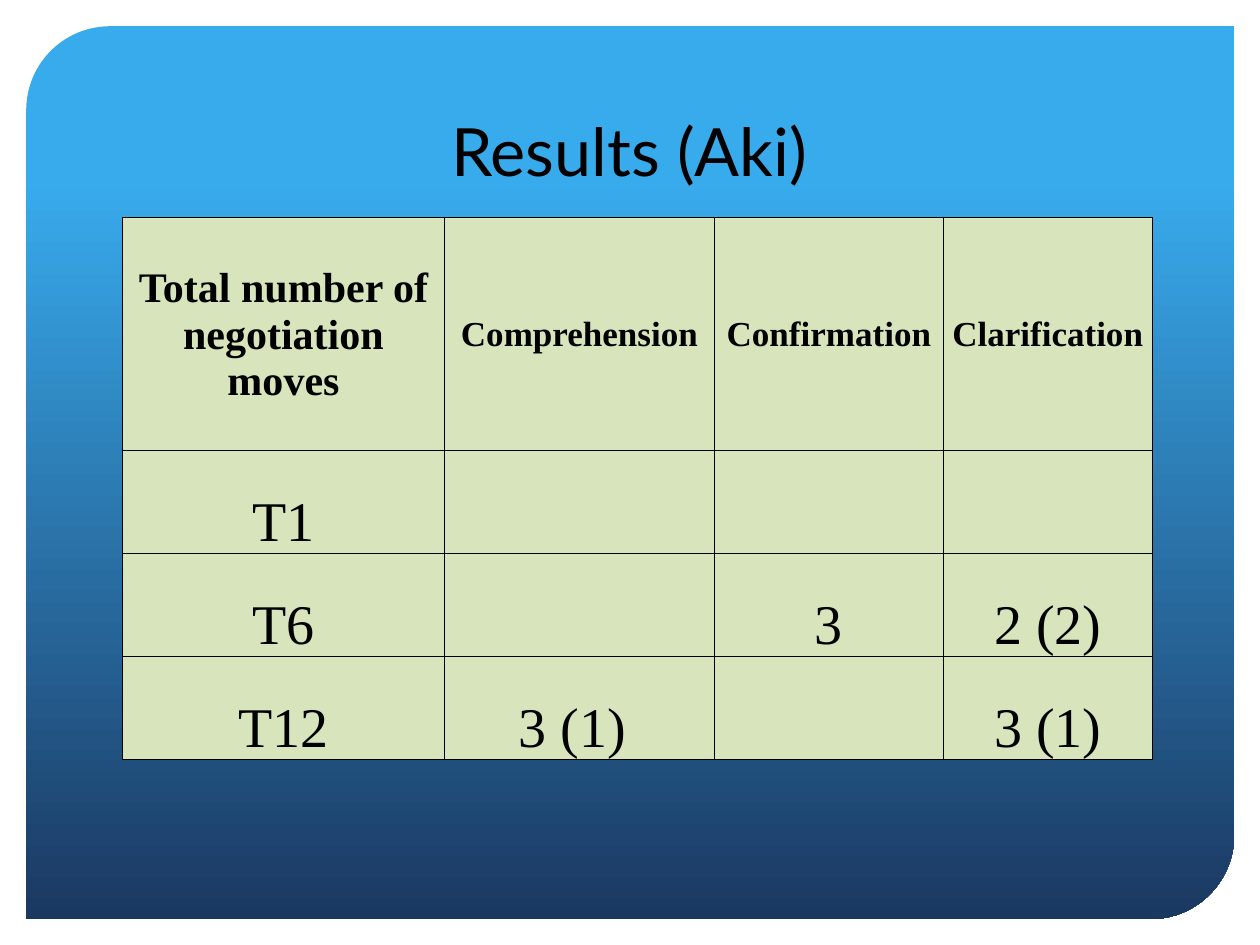
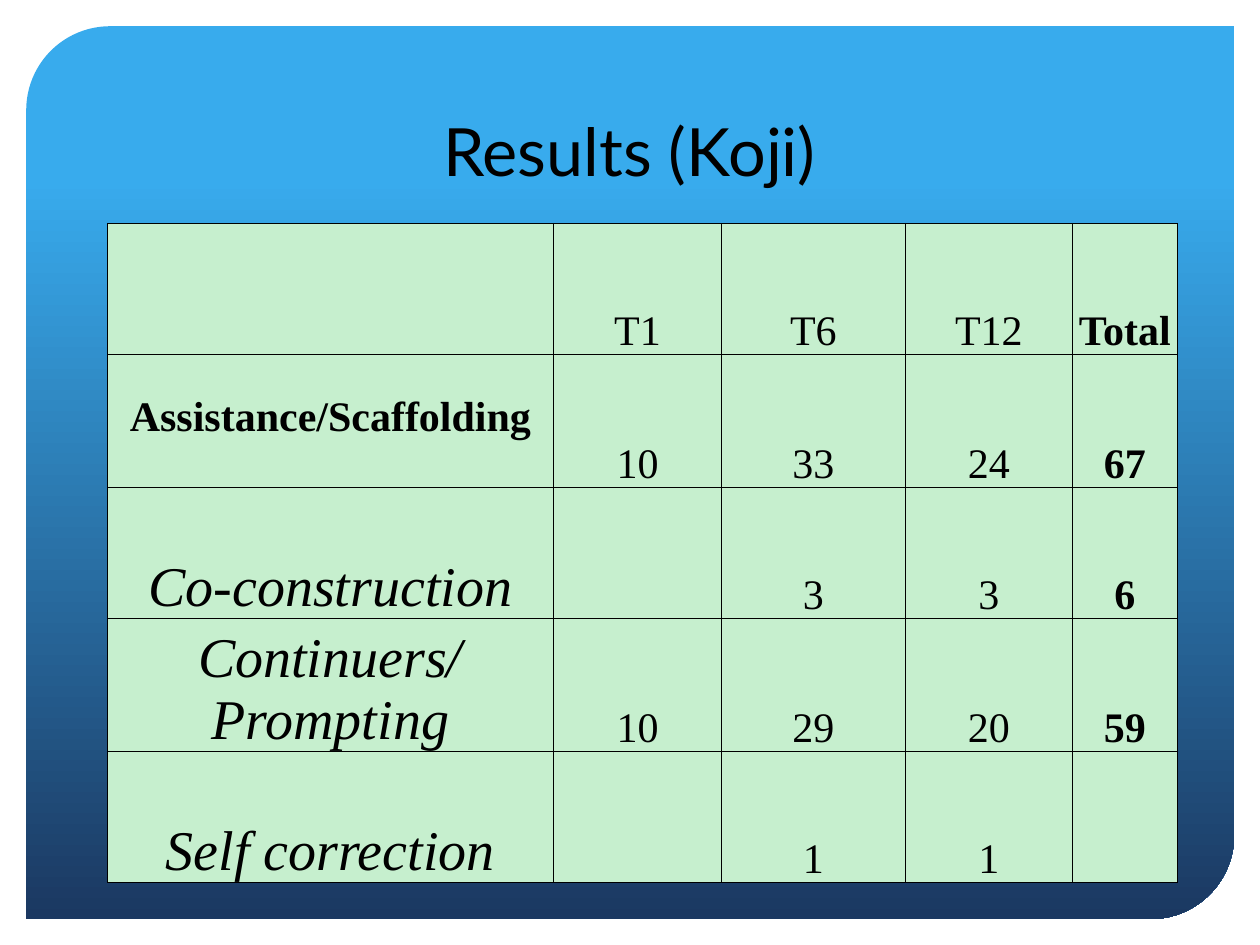
from dataclasses import dataclass

from lxml import etree
from pptx import Presentation
from pptx.dml.color import RGBColor
from pptx.enum import shapes, text
from pptx.oxml import ns
from pptx.util import Pt

BLACK = RGBColor(0x00, 0x00, 0x00)
SKY = RGBColor(0x38, 0xAB, 0xED)
NAVY = RGBColor(0x1B, 0x38, 0x61)
OLIVE = RGBColor(0xD8, 0xE4, 0xBC)
MINT = RGBColor(0xC6, 0xEF, 0xCE)

TITLE_FONT = "Lato"
TABLE_FONT = "Times New Roman"


@dataclass
class CellStyle:
    size: int = 24
    bold: bool = False
    italic: bool = False
    anchor: text.MSO_ANCHOR = text.MSO_ANCHOR.BOTTOM
    bottom: float = 0


NUMBER = CellStyle()
TOTAL = CellStyle(bold=True)
CATEGORY = CellStyle(bold=True, bottom=26.6)
SUBCATEGORY = CellStyle(size=32, italic=True)
COUNT = CellStyle(size=32)
MAIN_HEADING = CellStyle(bold=True, anchor=text.MSO_ANCHOR.MIDDLE)
MOVE_HEADING = CellStyle(size=20, bold=True, anchor=text.MSO_ANCHOR.MIDDLE)


def format_text(frame, font_name, size, bold=False, italic=False):
    para = frame.paragraphs[0]
    para.alignment = text.PP_ALIGN.CENTER
    para.font.name = font_name
    para.font.size = Pt(size)
    para.font.bold = bold
    para.font.italic = italic
    para.font.color.rgb = BLACK


def add_panel(page, layout):
    panel = page.shapes.add_shape(
        shapes.MSO_SHAPE.ROUND_2_DIAG_RECTANGLE, Pt(15), Pt(15), Pt(690.3), Pt(510.3))
    panel.adjustments[0] = 0.094
    panel.adjustments[1] = 0
    panel.shadow.inherit = False
    panel.line.fill.background()
    panel.fill.gradient()
    panel.fill.gradient_angle = 270
    stops = panel.fill.gradient_stops
    for stop, position, colour in zip(stops, (0.17, 1), (SKY, NAVY)):
        stop.position = position
        stop.color.rgb = colour
    layout.shapes._spTree.insert(2, panel._element)


def set_title(page, wording):
    title = page.shapes.title
    title.left, title.top, title.width, title.height = Pt(61.2), Pt(30.2), Pt(597), Pt(82.1)
    frame = title.text_frame
    frame.text = wording
    frame.vertical_anchor = text.MSO_ANCHOR.BOTTOM
    format_text(frame, TITLE_FONT, 38)


def add_borders(cell):
    properties = cell._tc.get_or_add_tcPr()
    for side in ("lnL", "lnR", "lnT", "lnB"):
        line = etree.SubElement(properties, ns.qn(f"a:{side}"), w=str(Pt(0.5)))
        fill = etree.SubElement(line, ns.qn("a:solidFill"))
        etree.SubElement(fill, ns.qn("a:srgbClr"), val=str(BLACK))


def fill_cell(cell, wording, style, colour):
    add_borders(cell)
    cell.fill.solid()
    cell.fill.fore_color.rgb = colour
    cell.margin_left = cell.margin_right = Pt(0.72)
    cell.margin_top = Pt(1.44)
    cell.margin_bottom = Pt(style.bottom)
    cell.vertical_anchor = style.anchor
    cell.text = wording
    format_text(cell.text_frame, TABLE_FONT, style.size, style.bold, style.italic)


def add_results(page, left, top, widths, heights, colour, rows, style_at):
    table = page.shapes.add_table(
        len(heights), len(widths), Pt(left), Pt(top),
        Pt(sum(widths)), Pt(sum(heights))).table
    table.first_row = table.horz_banding = False
    for column, width in zip(table.columns, widths):
        column.width = Pt(width)
    for row, height in zip(table.rows, heights):
        row.height = Pt(height)
    for r, row in enumerate(rows):
        for c, wording in enumerate(row):
            fill_cell(table.cell(r, c), wording, style_at(r, c), colour)


def move_style(row, column):
    if row:
        return COUNT
    return MOVE_HEADING if column else MAIN_HEADING


def assistance_style(row, column):
    if column == 0:
        return CATEGORY if row == 1 else SUBCATEGORY
    return TOTAL if column == 4 else NUMBER


def main():
    deck = Presentation()
    deck.slide_width, deck.slide_height = Pt(720), Pt(540)
    layout = deck.slide_layouts[5]

    aki = deck.slides.add_slide(layout)
    add_panel(aki, layout)
    set_title(aki, "Results (Aki)")
    add_results(
        aki, 70, 124.2, [184, 154.3, 130.8, 119.4], [133.1] + [58.9] * 3, OLIVE,
        [["Total number of negotiation moves", "Comprehension", "Confirmation", "Clarification"],
         ["T1", "", "", ""],
         ["T6", "", "3", "2 (2)"],
         ["T12", "3 (1) ", "", "3 (1)"]],
        move_style)

    koji = deck.slides.add_slide(layout)
    set_title(koji, "Results (Koji)")
    add_results(
        koji, 61.4, 127.6, [254.9, 96, 105.1, 95.4, 60],
        [74.8, 76.2, 74.8, 76.2, 74.8], MINT,
        [["", "T1", "T6", "T12", "Total"],
         ["Assistance/Scaffolding", "10", "33", "24", "67"],
         ["Co-construction", "", "3", "3", "6"],
         ["Continuers/Prompting", "10", "29", "20", "59"],
         ["Self correction", "", "1", "1", ""]],
        assistance_style)

    deck.save("out.pptx")


if __name__ == "__main__":
    main()
